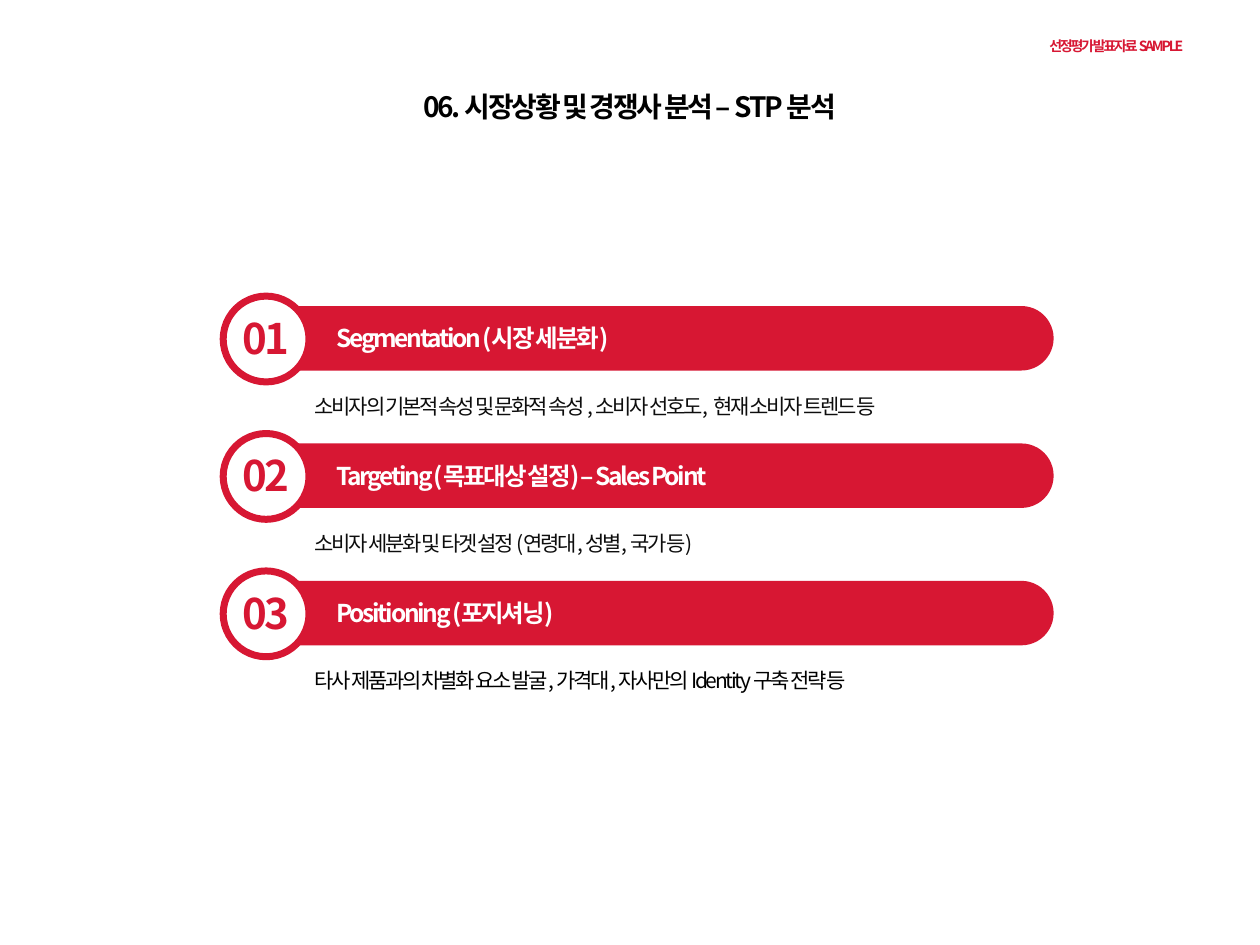
from lxml.etree import SubElement
from pptx import Presentation
from pptx.dml.color import RGBColor
from pptx.enum.shapes import MSO_SHAPE
from pptx.enum.text import MSO_ANCHOR, MSO_AUTO_SIZE, PP_ALIGN
from pptx.oxml.ns import qn
from pptx.util import Cm, Pt

RED = RGBColor(0xD7, 0x17, 0x33)
WHITE = RGBColor(0xFF, 0xFF, 0xFF)
BLACK = RGBColor(0x00, 0x00, 0x00)
INK = RGBColor(0x0D, 0x0D, 0x0D)
FONT = "Noto Sans CJK KR"
STEP_HEIGHT = 2.77
STEPS = [
    ("Segmentation (시장 세분화)",
     "소비자의 기본적 속성 및 문화적 속성 , 소비자 선호도,  현재 소비자 트렌드 등", 17.73, INK),
    ("Targeting (목표대상 설정) – Sales Point",
     "소비자 세분화 및 타겟 설정 (연령대, 성별, 국가 등)", 14.27, INK),
    ("Positioning (포지셔닝)",
     "타사 제품과의 차별화 요소 발굴, 가격대, 자사만의 Identity 구축 전략 등", 14.27, BLACK),
]


def write(shape, text, size, color, bold=True, align=PP_ALIGN.LEFT, anchor=MSO_ANCHOR.MIDDLE):
    """Write one tightly spaced paragraph into a shape."""
    frame = shape.text_frame
    frame.text = text
    frame.word_wrap = True
    frame.auto_size = MSO_AUTO_SIZE.NONE
    frame.vertical_anchor = anchor
    para = frame.paragraphs[0]
    para.alignment = align
    font = para.font
    font.size, font.bold, font.name = Pt(size), bold, FONT
    font.color.rgb = color
    properties = font._element
    properties.set("spc", "-130")
    SubElement(properties, qn("a:ea")).set("typeface", FONT)
    return frame


def add_text(page, left, top, width, height, *args, **options):
    """Add a text box measured in centimetres and return its frame."""
    box = page.shapes.add_textbox(Cm(left), Cm(top), Cm(width), Cm(height))
    return write(box, *args, **options)


def add_title(page, left, top, width, height):
    """Place the slide title."""
    title = page.shapes.title
    title.left, title.top, title.width, title.height = map(Cm, (left, top, width, height))
    frame = write(title, "06. 시장상황 및 경쟁사 분석 – STP 분석", 16, BLACK, align=PP_ALIGN.CENTER)
    frame.word_wrap = False


def add_bar(page, left, top, width, height):
    """Draw a red bar with a rounded right end."""
    bar = page.shapes.add_shape(
        MSO_SHAPE.ROUND_2_SAME_RECTANGLE,
        Cm(left + (width - height) / 2), Cm(top + (height - width) / 2), Cm(height), Cm(width))
    bar.rotation = 90
    bar.adjustments[0] = 0.5
    bar.adjustments[1] = 0
    bar.shadow.inherit = False
    bar.fill.solid()
    bar.fill.fore_color.rgb = RED
    bar.line.fill.background()


def add_badge(page, left, top, size, label):
    """Draw a ringed circle with its number."""
    circle = page.shapes.add_shape(MSO_SHAPE.OVAL, Cm(left), Cm(top), Cm(size), Cm(size))
    circle.shadow.inherit = False
    circle.fill.solid()
    circle.fill.fore_color.rgb = WHITE
    circle.line.color.rgb = RED
    circle.line.width = Pt(4)
    frame = add_text(page, left, top + 0.33, size, 1.02, label, 24, RED, align=PP_ALIGN.CENTER)
    frame.margin_top = frame.margin_bottom = 0


def add_step(page, left, top, width, label, heading, caption, caption_width, caption_color):
    """Place one numbered step with its heading and caption."""
    add_bar(page, left + 0.86, top + 0.2, width - 0.86, 1.3)
    add_badge(page, left, top, 1.73, label)
    add_text(page, left + 2.03, top + 0.41, 14.17, 0.86, heading, 14, WHITE)
    add_text(page, left + 1.6, top + 1.83, caption_width, 0.76, caption, 12, caption_color, bold=False)


def main():
    """Build the slide and save it."""
    deck = Presentation()
    deck.slide_width, deck.slide_height = Cm(25.4), Cm(19.05)
    page = deck.slides.add_slide(deck.slide_layouts[5])
    add_title(page, 3.35, 1.55, 18.69, 1.17)
    for index, step in enumerate(STEPS):
        add_step(page, 4.5, 5.97 + index * STEP_HEIGHT, 16.74, f"{index + 1:02}", *step)
    add_text(page, 20.7, 0.64, 3.61, 0.61, "선정평가 발표자료 SAMPLE", 8, RED,
             align=PP_ALIGN.CENTER, anchor=MSO_ANCHOR.TOP)
    deck.save("out.pptx")


if __name__ == "__main__":
    main()
